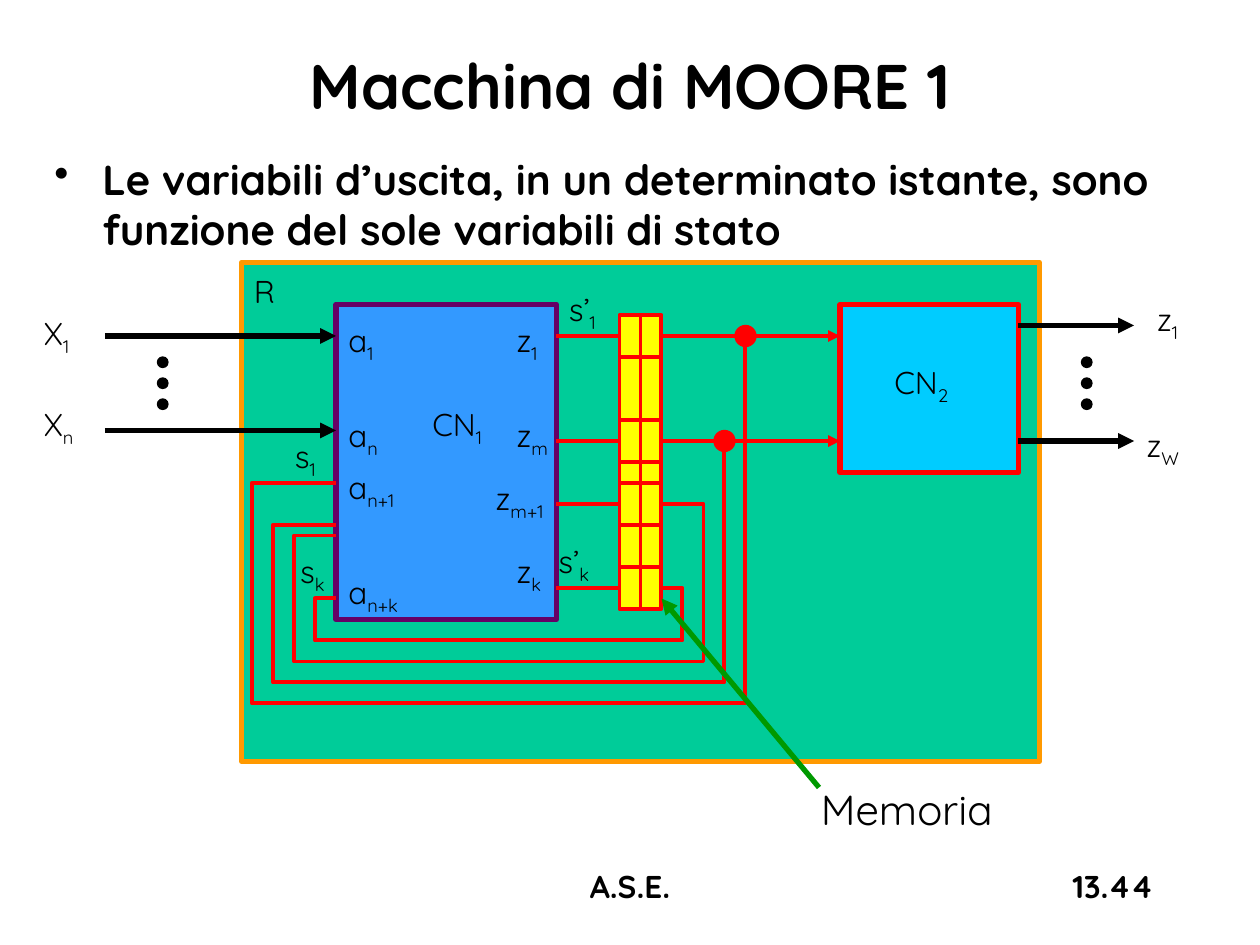
from pptx import Presentation, util as u
from pptx.dml.color import RGBColor
from pptx.enum import shapes as sh, text as tx
from pptx.oxml import parse_xml
from pptx.oxml.ns import nsdecls, qn
from lxml import etree

# The drawing sits on a grid of 12 cells to the inch: 120 columns, 90 rows
COLS, ROWS = 120, 90
CELL = u.Inches(10) // COLS
FONT = "Quicksand"
BLACK, RED, GREEN, YELLOW = "000000", "FF0000", "009900", "FFFF00"
LEFT, MID, RIGHT = tx.PP_ALIGN.LEFT, tx.PP_ALIGN.CENTER, tx.PP_ALIGN.RIGHT
RECT, OVAL = sh.MSO_SHAPE.RECTANGLE, sh.MSO_SHAPE.OVAL


def grid(*cells):
    return [round(c * CELL) for c in cells]


def color(code):
    return RGBColor.from_string(code)


def stroke(line, code, width):
    line.color.rgb = color(code)
    line.width = u.Pt(width)


def write(slide, box, words, sub="", size=18, bold=False, align=LEFT,
          anchor=tx.MSO_ANCHOR.TOP, wrap=True, grow=False, bullet=False):
    frame = slide.shapes.add_textbox(*grid(*box)).text_frame
    frame.word_wrap = wrap
    frame.vertical_anchor = anchor
    if grow:
        frame.auto_size = tx.MSO_AUTO_SIZE.SHAPE_TO_FIT_TEXT
    para = frame.paragraphs[0]
    para.alignment = align
    if bullet:
        props = para._p.get_or_add_pPr()
        props.set("marL", str(u.Inches(0.38)))
        props.set("indent", str(-u.Inches(0.38)))
        props.append(parse_xml(f'<a:buChar {nsdecls("a")} char="•"/>'))
    for part in filter(None, (words, sub)):
        run = para.add_run()
        run.text = part
        run.font.name = FONT
        run.font.size = u.Pt(size)
        run.font.bold = bold
        run.font.color.rgb = color(BLACK)
    if sub:
        run.font._element.set("baseline", "-25000")


def block(slide, kind, box, fill, edge, width):
    shape = slide.shapes.add_shape(kind, *grid(*box))
    shape.shadow.inherit = False
    shape.fill.solid()
    shape.fill.fore_color.rgb = color(fill)
    stroke(shape.line, edge, width)


def dot(slide, x, y, size, code):
    block(slide, OVAL, (x - size / 2, y - size / 2, size, size), code, code, 0.75)


def wire(slide, x1, y1, x2, y2, code=RED, width=2.25, arrow=False):
    link = slide.shapes.add_connector(sh.MSO_CONNECTOR.STRAIGHT, *grid(x1, y1, x2, y2))
    stroke(link.line, code, width)
    if arrow:
        etree.SubElement(link.line._get_or_add_ln(), qn("a:tailEnd"), type="triangle")
    etree.SubElement(link._element.spPr, qn("a:effectLst"))


def loop(slide, points):
    path = slide.shapes.build_freeform(*points[0], scale=CELL)
    path.add_line_segments(points[1:], close=False)
    shape = path.convert_to_shape()
    shape.shadow.inherit = False
    shape.fill.background()
    stroke(shape.line, RED, 2.25)


def blocks(slide):
    block(slide, RECT, (23, 25, 76, 47.5), "00CC99", "FF9900", 3)
    block(slide, RECT, (32, 29, 21, 30), "3399FF", "660066", 3)
    block(slide, RECT, (80, 29, 17, 16), "00CCFF", RED, 3)
    # Memory: two columns of cells
    block(slide, RECT, (59, 30, 4, 28), YELLOW, RED, 2.25)
    wire(slide, 61, 30, 61, 58)
    for y in (34, 40, 44, 46, 50, 54):
        wire(slide, 59, y, 63, y)


def wires(slide):
    # Inputs and outputs
    for x1, y, x2 in ((10, 32, 32), (10, 41, 32), (97, 31, 108), (97, 42, 108)):
        wire(slide, x1, y, x2, y, BLACK, 3, True)
    for x in (15.5, 103.5):
        for y in (34.5, 36.5, 38.5):
            dot(slide, x, y, 1, BLACK)
    # First network to memory, memory to second network
    for y in (32, 42, 48, 56):
        wire(slide, 53, y, 59, y)
    for y in (32, 42):
        wire(slide, 63, y, 80, y, arrow=True)
    # Feedback: start, right edge, bottom, left edge, return row
    for x, y, right, low, left, back in (
            (63, 56, 65, 61, 30, 57), (63, 48, 67, 63, 28, 51),
            (69, 42, 69, 65, 26, 50), (71, 32, 71, 67, 24, 46)):
        turn = [(right, y)] if right > x else []
        loop(slide, [(x, y), *turn, (right, low), (left, low), (left, back), (32, back)])
    for x, y in ((69, 42), (71, 32)):
        dot(slide, x, y, 2, RED)
    wire(slide, 78, 75, 63, 57, GREEN, 3, True)


def labels(slide):
    # Column, row, width, letter, subscript, wrap
    for x, y, w, name, sub, wrap in (
            (23, 25.3, 4.6, "R", "", False),
            (40, 38, 8.2, "CN", "1", True), (84, 34, 8.2, "CN", "2", True),
            (3, 29.3, 5.4, "X", "1", False), (3, 38, 6.7, "X", "n", True),
            (109, 28, 5.8, "z", "1", True), (108, 40, 8, "z", "W", True),
            (26.9, 41, 5.3, "s", "1", False), (27.4, 52, 6.7, "s", "k", True),
            (53, 27, 6.7, "s’", "1", True), (52, 51, 6.1, "s’", "k", False),
            (32, 30, 5.4, "a", "1", False), (32, 39, 5.4, "a", "n", False),
            (32, 44, 7.8, "a", "n+1", False), (32, 54, 9, "a", "n+k", True),
            (48, 30, 5.2, "z", "1", False), (48, 39, 5.8, "z", "m", False),
            (46, 45, 8.2, "z", "m+1", False), (48, 52, 6, "z", "k", True)):
        write(slide, (x, y, w, 4.8), name, sub, wrap=wrap, grow=True)
    write(slide, (77, 74, 19.3, 6), "Memoria", size=24, wrap=False, grow=True)


def main():
    deck = Presentation()
    deck.slide_width, deck.slide_height = grid(COLS, ROWS)
    slide = deck.slides.add_slide(deck.slide_layouts[6])
    # Heading and statement
    write(slide, (2, 2, 116, 12), "Macchina di MOORE 1", size=36, bold=True,
          align=MID, anchor=tx.MSO_ANCHOR.MIDDLE)
    write(slide, (4, 14, 116, 67), "Le variabili d’uscita, in un determinato istante, "
          "sono funzione del sole variabili di stato", size=24, bold=True, bullet=True)
    # Diagram
    blocks(slide)
    wires(slide)
    labels(slide)
    # Footer
    write(slide, (86, 82, 25, 6), "13.44", bold=True, align=RIGHT)
    write(slide, (41, 82, 38, 6), "A.S.E.", bold=True, align=MID)
    deck.save("out.pptx")


if __name__ == "__main__":
    main()
